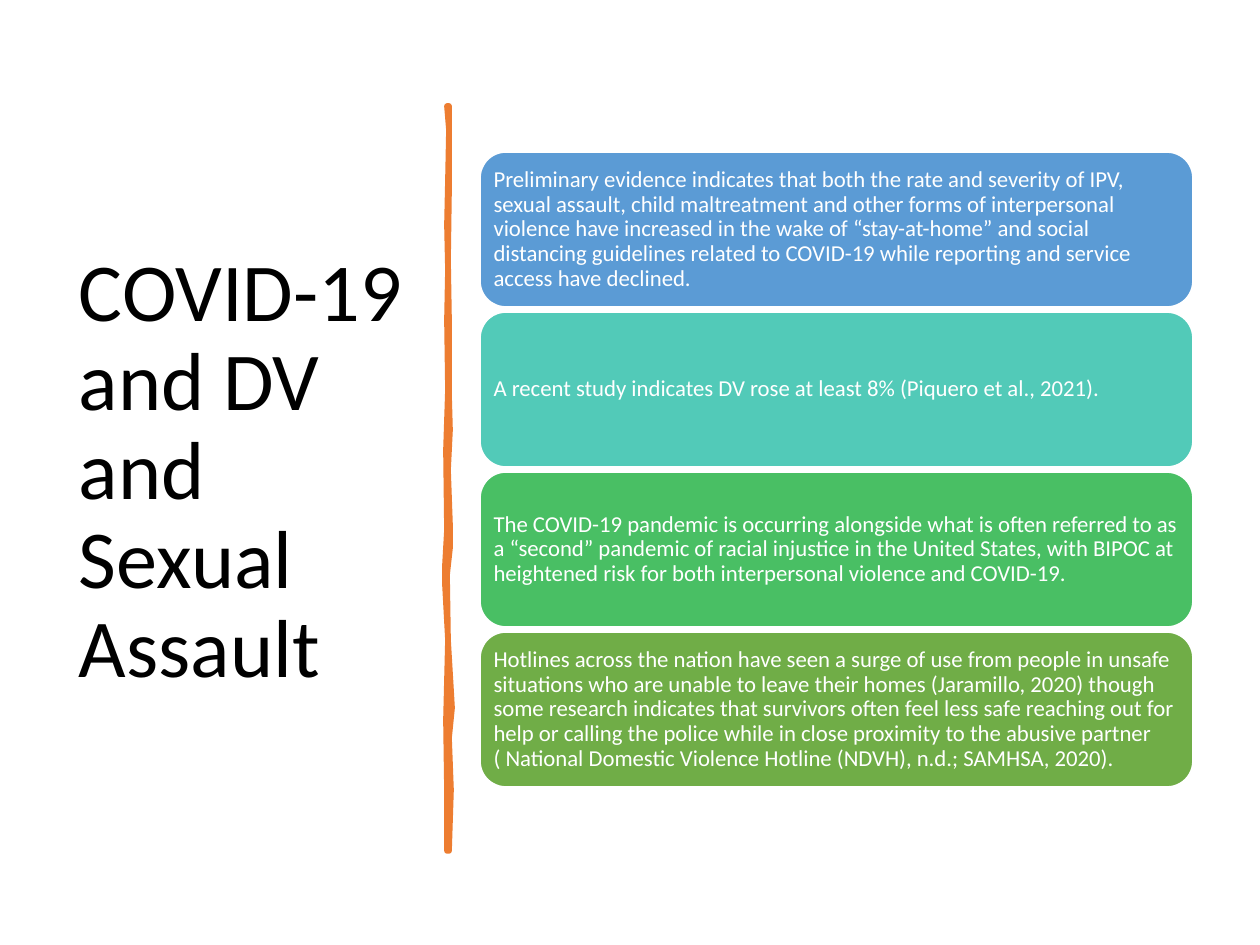
"""Build the slide on COVID-19, domestic violence and sexual assault."""
from pptx import Presentation
from pptx.dml.color import RGBColor
from pptx.enum.shapes import MSO_SHAPE
from pptx.enum.text import MSO_ANCHOR, PP_ALIGN
from pptx.util import Pt

ROUNDED = MSO_SHAPE.ROUNDED_RECTANGLE
MIDDLE = MSO_ANCHOR.MIDDLE
LEFT = PP_ALIGN.LEFT
PX = 914400 / 126
BLACK = RGBColor(0x00, 0x00, 0x00)
WHITE = RGBColor(0xFF, 0xFF, 0xFF)
ORANGE = RGBColor(0xED, 0x7D, 0x31)
BLUE = RGBColor(0x5B, 0x9B, 0xD5)
TEAL = RGBColor(0x52, 0xCA, 0xB8)
GREEN = RGBColor(0x49, 0xBF, 0x64)
OLIVE = RGBColor(0x70, 0xAD, 0x47)

HEADING = "COVID-19 and DV and Sexual Assault"
FINDINGS = [
    (BLUE, "Preliminary evidence indicates that both the rate and severity of IPV, sexual assault, "
           "child maltreatment and other forms of interpersonal violence have increased in the wake "
           "of “stay-at-home” and social distancing guidelines related to COVID-19 while reporting "
           "and service access have declined."),
    (TEAL, "A recent study indicates DV rose at least 8% (Piquero et al., 2021)."),
    (GREEN, "The COVID-19 pandemic is occurring alongside what is often referred to as a “second” "
            "pandemic of racial injustice in the United States, with BIPOC at heightened risk for "
            "both interpersonal violence and COVID-19."),
    (OLIVE, "Hotlines across the nation have seen a surge of use from people in unsafe situations "
            "who are unable to leave their homes (Jaramillo, 2020) though some research indicates "
            "that survivors often feel less safe reaching out for help or calling the police while "
            "in close proximity to the abusive partner ( National Domestic Violence Hotline (NDVH), "
            "n.d.; SAMHSA, 2020)."),
]
DIVIDER_EDGE = [
    (449, 106), (449, 190), (448, 260), (449, 320), (449, 395), (450, 430), (448, 470),
    (450, 525), (450, 548), (447, 575), (448, 640), (451, 690), (452, 708), (449, 738),
    (451, 790), (449, 851), (447, 851), (447, 790), (446, 720), (448, 640), (445, 585),
    (445, 565), (447, 530), (446, 450), (448, 390), (447, 320), (448, 270), (447, 225),
    (448, 180), (449, 130), (447, 106),
]


def px(length):
    return round(length * PX)


def write(shape, text, size, color, inset_x, inset_y):
    frame = shape.text_frame
    frame_format = {
        "word_wrap": True, "vertical_anchor": MIDDLE,
        "margin_left": px(inset_x), "margin_right": px(inset_x),
        "margin_top": px(inset_y), "margin_bottom": px(inset_y),
    }
    for name, value in frame_format.items():
        setattr(frame, name, value)
    paragraph = frame.paragraphs[0]
    paragraph.alignment = LEFT
    paragraph.line_spacing = 0.9
    run = paragraph.add_run()
    run.text = text
    for name, value in {"name": "Calibri", "size": Pt(size)}.items():
        setattr(run.font, name, value)
    run.font.color.rgb = color


deck = Presentation()
deck.slide_width, deck.slide_height = px(1260), px(945)
slide = deck.slides.add_slide(deck.slide_layouts[6])

heading = slide.shapes.add_textbox(px(66), px(88), px(353), px(770))
write(heading, HEADING, 47, BLACK, 13, 6)

outline = slide.shapes.build_freeform(*DIVIDER_EDGE[0], scale=PX)
outline.add_line_segments(DIVIDER_EDGE[1:], close=True)
divider = outline.convert_to_shape()
divider.shadow.inherit = False
divider.fill.solid()
divider.fill.fore_color.rgb = ORANGE
divider.line.color.rgb = ORANGE
divider.line.width = Pt(3.25)

for row, (color, finding) in enumerate(FINDINGS):
    card = slide.shapes.add_shape(ROUNDED, px(480), px(152 + 160 * row), px(713), px(155))
    card.shadow.inherit = False
    card.fill.solid()
    card.fill.fore_color.rgb = color
    card.line.color.rgb = WHITE
    card.line.width = Pt(1)
    write(card, finding, 13, WHITE, 6, 6)

deck.save("out.pptx")
